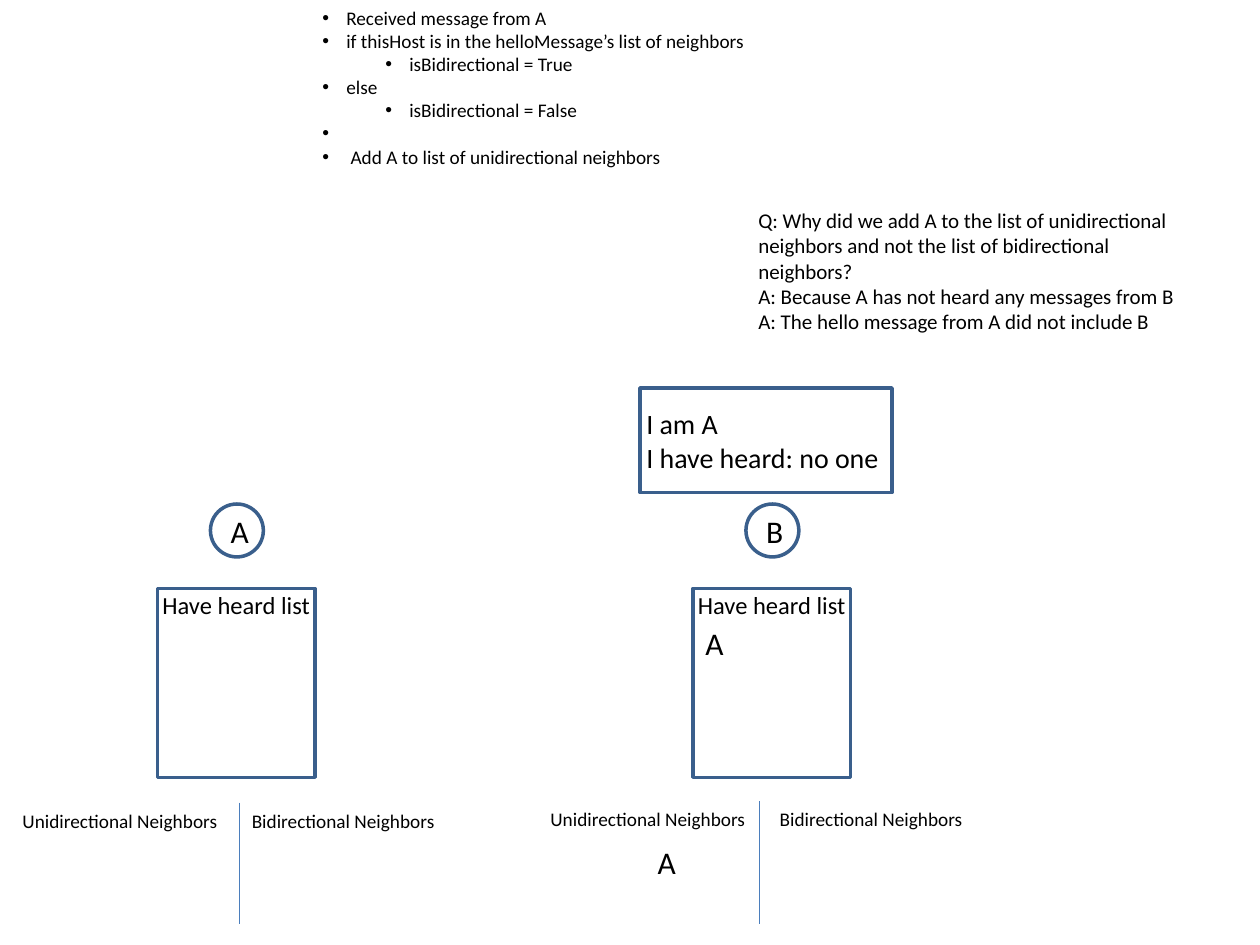
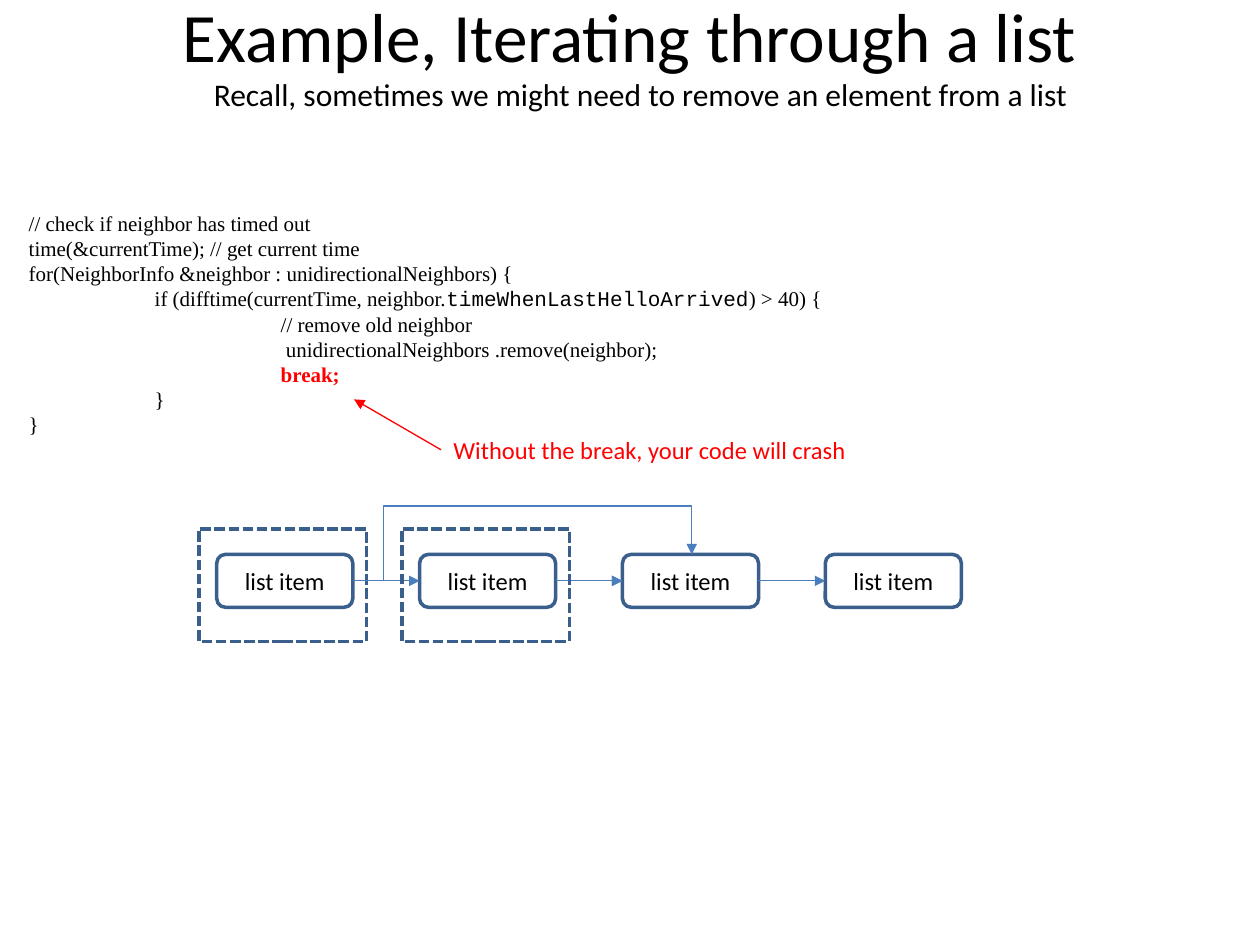
"""Build two slides: neighbor discovery with hello messages, and removing items while iterating a list."""
from lxml.etree import SubElement
from pptx import Presentation
from pptx.dml.color import RGBColor
from pptx.enum.dml import MSO_LINE as Dash
from pptx.enum.shapes import MSO_CONNECTOR as Link, MSO_SHAPE as Preset
from pptx.enum.text import MSO_ANCHOR as Anchor, MSO_AUTO_SIZE as Fit, PP_ALIGN as Align
from pptx.oxml.ns import qn
from pptx.util import Inches, Pt

OUTLINE, LINK, RED, BLACK = "3A5F8C", "4B7EBC", "FF0000", "000000"
MIDDLE = {"vertical_anchor": Anchor.MIDDLE, "word_wrap": True}
GROW = {"auto_size": Fit.SHAPE_TO_FIT_TEXT, "word_wrap": True}
LABEL = {"auto_size": Fit.SHAPE_TO_FIT_TEXT, "word_wrap": False}


def write(box, lines, size, frame_format, align=Align.LEFT, font="Calibri", color=BLACK):
    """Fill a box with lines, each a string or a list of (text, font format) spans."""
    frame = box.text_frame
    for name, value in frame_format.items():
        setattr(frame, name, value)
    for index, line in enumerate(lines):
        para = frame.add_paragraph() if index else frame.paragraphs[0]
        para.alignment = align
        for text, changes in [(line, {})] if isinstance(line, str) else line:
            span = para.add_run()
            span.text = text
            look = {"name": font, "size": Pt(size), "color": color} | changes
            span.font.color.rgb = RGBColor.from_string(look.pop("color"))
            for name, value in look.items():
                setattr(span.font, name, value)
    return box


def stroke(item, color=OUTLINE, width=2, dash=None, arrow=False):
    """Give a shape or connector a plain line without a shadow."""
    item.line.color.rgb = RGBColor.from_string(color)
    item.line.width = Pt(width)
    if dash:
        item.line.dash_style = dash
    properties = item._element.spPr
    if arrow:
        SubElement(properties.find(qn("a:ln")), qn("a:tailEnd"), type="triangle")
    if hasattr(item, "fill"):
        item.fill.background()
    SubElement(properties, qn("a:effectLst"))
    return item


deck = Presentation()
deck.slide_width, deck.slide_height = Inches(10), Inches(7.5)
blank = deck.slide_layouts[6]

page = deck.slides.add_slide(blank)
hosts = [("A", 1.25, 0.08, 1.9, 1.9, 6.37), ("B", 5.5, 4.27, 6.09, 6.03, 6.36)]
for host, left, uni_left, bi_left, divider, top in hosts:
    node = page.shapes.add_shape(Preset.OVAL, Inches(left + 0.42), Inches(4), Inches(0.42), Inches(0.42))
    write(stroke(node), [host], 18, MIDDLE, Align.CENTER)
    stroke(page.shapes.add_shape(Preset.RECTANGLE, Inches(left), Inches(4.67), Inches(1.25), Inches(1.5)))
    labels = [
        ("Have heard list", left - 0.06, 4.63, 1.39, 0.34, 14),
        ("Unidirectional Neighbors", uni_left, top, 1.76, 0.29, 11),
        ("Bidirectional Neighbors", bi_left, top, 1.66, 0.29, 11),
    ]
    for text, x, y, width, height, size in labels:
        box = page.shapes.add_textbox(Inches(x), Inches(y), Inches(width), Inches(height))
        write(box, [text], size, LABEL)
    line = page.shapes.add_connector(
        Link.STRAIGHT, Inches(divider), Inches(top), Inches(divider), Inches(7.33))
    stroke(line, LINK, 0.75)

for x, y in [(5.5, 4.9), (5.12, 6.64)]:
    box = page.shapes.add_textbox(Inches(x), Inches(y), Inches(0.35), Inches(0.4))
    write(box, ["A"], 18, LABEL)

message = page.shapes.add_shape(Preset.RECTANGLE, Inches(5.08), Inches(3.08), Inches(2), Inches(0.83))
message_format = {
    "vertical_anchor": Anchor.MIDDLE, "word_wrap": False, "margin_left": Inches(0.05),
    "margin_top": 0, "margin_right": 0, "margin_bottom": 0,
}
write(stroke(message), ["I am A", "I have heard: no one"], 16, message_format)

steps = [
    (0, "Received message from A"),
    (0, "if thisHost is in the helloMessage’s list of neighbors"),
    (1, "isBidirectional = True"),
    (0, "else"),
    (1, "isBidirectional = False"),
    (0, " "),
    (0, " Add A to list of unidirectional neighbors"),
]
box = page.shapes.add_textbox(Inches(2.46), Inches(0), Inches(3.57), Inches(2.14))
write(box, [text for _, text in steps], 11, LABEL)
for (level, _), para in zip(steps, box.text_frame.paragraphs):
    para.level = level
    properties = para._p.get_or_add_pPr()
    properties.set("marL", str(Inches(0.19 + 0.5 * level)))
    properties.set("indent", str(Inches(-0.19)))
    SubElement(properties, qn("a:buFont"), typeface="Arial")
    SubElement(properties, qn("a:buChar"), char="•")

box = page.shapes.add_textbox(Inches(5.92), Inches(1.6), Inches(3.67), Inches(1.11))
write(box, [
    "Q: Why did we add A to the list of unidirectional neighbors and not the list of bidirectional neighbors?",
    "A: Because A has not heard any messages from B",
    "A: The hello message from A did not include B",
], 12, GROW)

page = deck.slides.add_slide(blank)
title = page.shapes.add_textbox(Inches(0.5), Inches(0.01), Inches(9), Inches(0.53))
write(title, ["Example, Iterating through a list"], 39.6, MIDDLE, Align.CENTER)
box = page.shapes.add_textbox(Inches(1.42), Inches(0.55), Inches(7.33), Inches(0.4))
write(box, ["Recall, sometimes we might need to remove an element from a list"], 18, GROW, Align.CENTER)

code = [
    (0, "// check if neighbor has timed out"),
    (0, "time(&currentTime); // get current time"),
    (0, "for(NeighborInfo &neighbor : unidirectionalNeighbors) {"),
    (1, [("if (difftime(currentTime, neighbor.", {}),
         ("timeWhenLastHelloArrived", {"name": "Courier New"}),
         (") > 40) {", {})]),
    (2, "// remove old neighbor"),
    (2, " unidirectionalNeighbors .remove(neighbor);"),
    (2, [("break;", {"color": RED, "bold": True})]),
    (1, "}"),
    (0, "}"),
]
box = page.shapes.add_textbox(Inches(0.13), Inches(1.62), Inches(8), Inches(1.92))
write(box, [line for _, line in code], 12, GROW, font="Times New Roman")
for (depth, _), para in zip(code, box.text_frame.paragraphs):
    para._p.get_or_add_pPr().set("marL", str(Inches(depth)))

items = []
for index in range(4):
    item = page.shapes.add_shape(
        Preset.ROUNDED_RECTANGLE, Inches(1.72 + 1.61 * index), Inches(4.4), Inches(1.08), Inches(0.42))
    items.append(write(stroke(item), ["list item"], 14, MIDDLE, Align.CENTER))

for start, dash in [(0, None), (1, None), (2, None), (1, Dash.DASH)]:
    arrow = page.shapes.add_connector(Link.STRAIGHT, 0, 0, 0, 0)
    arrow.begin_connect(items[start], 3)
    arrow.end_connect(items[start + 1], 1)
    stroke(arrow, LINK, 0.75, dash, arrow=True)

for index in range(2):
    frame = page.shapes.add_shape(
        Preset.RECTANGLE, Inches(1.58 + 1.61 * index), Inches(4.2), Inches(1.33), Inches(0.89))
    stroke(frame, dash=Dash.SQUARE_DOT)

box = page.shapes.add_textbox(Inches(3.5), Inches(3.4), Inches(4.33), Inches(0.34))
write(box, ["Without the break, your code will crash"], 14, GROW, color=RED)
pointer = page.shapes.add_connector(Link.STRAIGHT, Inches(3.5), Inches(3.57), Inches(2.81), Inches(3.17))
stroke(pointer, RED, 0.75, arrow=True)

bypass = page.shapes.add_connector(Link.ELBOW, Inches(2.81), Inches(4.61), Inches(5.49), Inches(4.4))
geometry = bypass._element.spPr.find(qn("a:prstGeom"))
geometry.set("prst", "bentConnector4")
for name, value in [("adj1", 8800), ("adj2", 282900)]:
    SubElement(geometry.find(qn("a:avLst")), qn("a:gd"), name=name, fmla=f"val {value}")
stroke(bypass, LINK, 0.75, arrow=True)

deck.save("out.pptx")
